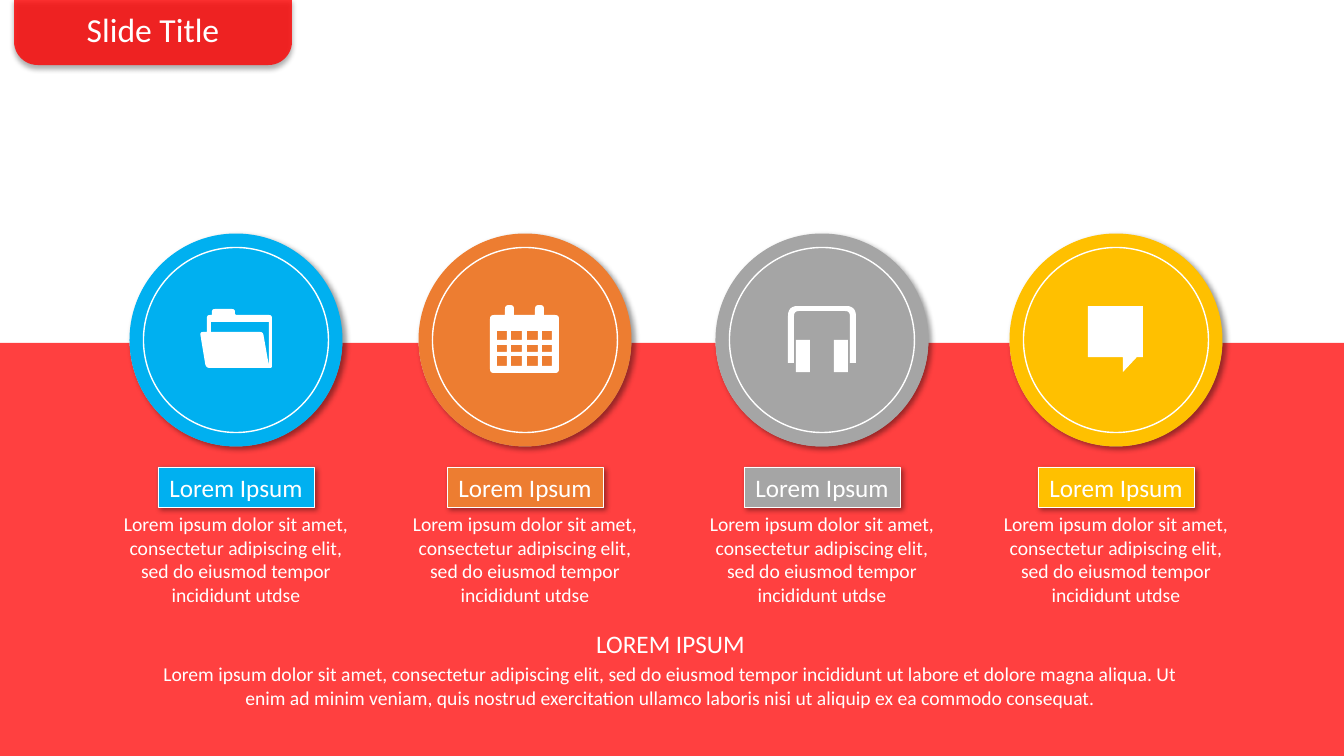
import math

import lxml.etree
import pptx
import pptx.dml.color
import pptx.enum.shapes
import pptx.enum.text
import pptx.oxml.ns
import pptx.util

SCALE = 914400 / 100.8  # EMU in one px
WIDTH, HEIGHT = 1344, 756
COLORS = {
    "red": "FF0000",
    "white": "FFFFFF",
    "black": "000000",
    "blue": "00B0F0",
    "orange": "ED7D31",
    "gray": "A5A5A5",
    "yellow": "FFC000",
}
SHAPES = pptx.enum.shapes.MSO_SHAPE
qn = pptx.oxml.ns.qn

# Circle row and red band
MIDDLE, RADIUS, RING_RADIUS, BAND_TOP = 340, 106.5, 92.5, 343

LABEL = "Lorem Ipsum"
DETAIL = ("Lorem ipsum dolor sit amet, consectetur adipiscing elit, "
          "sed do eiusmod tempor incididunt utdse")
SUMMARY = ("Lorem ipsum dolor sit amet, consectetur adipiscing elit, sed do eiusmod "
           "tempor incididunt ut labore et dolore magna aliqua. Ut enim ad minim "
           "veniam, quis nostrud exercitation ullamco laboris nisi ut aliquip ex ea "
           "commodo consequat.")


def block(left, top, width, height):
    right, bottom = left + width, top + height
    return [(left, top), (right, top), (right, bottom), (left, bottom)]


# Icon contours around the circle centre: x, y and optional corner radius
FOLDER = [
    [(-29, -8), (-29, -25, 3), (-24, -25), (-24, -31, 3), (-1, -31, 3),
     (-1, -25, 2), (36, -25, 3), (36, 28, 2), (-30, 28, 4), (-36, -8, 3)],
    [(33, -18), (33, 26), (27, -8, 3), (-25, -8), (-25, -18)],
]
CALENDAR = [
    [(-35, -25, 4), (-20, -25), (-20, -35, 4), (-11, -35, 4), (-11, -25),
     (10, -25), (10, -35, 4), (19, -35, 4), (19, -25), (34, -25, 4),
     (34, 33, 4), (-35, 33, 4)],
] + [
    block(left, top, width, height)
    for left, width in ((-28, 10), (-14, 11), (2, 11), (17, 10))
    for top, height in ((-9, 9), (5, 7), (16, 10))
]
HEADPHONES = [
    [(-34, 23), (-34, -34, 10), (34, -34, 10), (34, 23),
     (28, 23), (28, -29, 5), (-28, -29, 5), (-28, 23)],
    block(-26, 0, 14, 32),
    block(12, 0, 14, 32),
]
BUBBLE = [[(-28, -34), (27, -34), (27, 17), (21, 17), (7, 32), (7, 17), (-28, 17)]]

# Centre, colour and icon of each column
COLUMNS = [
    (236, "blue", FOLDER),
    (525, "orange", CALENDAR),
    (822, "gray", HEADPHONES),
    (1116, "yellow", BUBBLE),
]


def emu(px):
    return round(px * SCALE)


def rgb(name):
    return pptx.dml.color.RGBColor.from_string(COLORS[name])


def set_fill(shape, color, opacity=100):
    shape.fill.solid()
    shape.fill.fore_color.rgb = rgb(color)
    if opacity < 100:
        tint = shape.element.spPr.find(qn("a:solidFill")).find(qn("a:srgbClr"))
        lxml.etree.SubElement(tint, qn("a:alpha"), val=str(opacity * 1000))


def set_shadow(shape, angle):
    effects = shape.element.spPr.find(qn("a:effectLst"))
    shadow = lxml.etree.SubElement(
        effects, qn("a:outerShdw"), blurRad=str(pptx.util.Pt(4)),
        dist=str(pptx.util.Pt(3)), dir=str(angle * 60000), rotWithShape="0")
    tint = lxml.etree.SubElement(shadow, qn("a:srgbClr"), val=COLORS["black"])
    lxml.etree.SubElement(tint, qn("a:alpha"), val="40000")


def add_preset(page, kind, bounds, fill=None, line=0, shadow_angle=None, opacity=100):
    shape = page.shapes.add_shape(kind, *map(emu, bounds))
    shape.shadow.inherit = False
    if fill:
        set_fill(shape, fill, opacity)
    else:
        shape.fill.background()
    if line:
        shape.line.color.rgb = rgb("white")
        shape.line.width = pptx.util.Pt(line)
    else:
        shape.line.fill.background()
    if shadow_angle is not None:
        set_shadow(shape, shadow_angle)
    return shape


def add_outline(page, contours, color, opacity=100):
    contours = [[(emu(x), emu(y)) for x, y in contour] for contour in contours]
    builder = page.shapes.build_freeform(*contours[0][0], scale=1.0)
    for number, contour in enumerate(contours):
        if number:
            builder.move_to(*contour[0])
        builder.add_line_segments(contour[1:], close=True)
    shape = builder.convert_to_shape()
    shape.shadow.inherit = False
    set_fill(shape, color, opacity)
    shape.line.fill.background()


def round_corners(contour):
    """Replace each corner that has a radius by points on a curve."""
    points = []
    for index, (x, y, *radius) in enumerate(contour):
        if not radius:
            points.append((x, y))
            continue
        ends = []
        for near in (contour[index - 1], contour[(index + 1) % len(contour)]):
            share = radius[0] / math.dist((x, y), near[:2])
            ends.append((x + (near[0] - x) * share, y + (near[1] - y) * share))
        for step in range(7):
            t = step / 6
            points.append(tuple(
                (1 - t) ** 2 * start + 2 * t * (1 - t) * corner + t * t * end
                for start, corner, end in zip(ends[0], (x, y), ends[1])))
    return points


def write(box, lines, wrap=True):
    frame = box.text_frame
    frame.word_wrap = wrap
    frame.auto_size = pptx.enum.text.MSO_AUTO_SIZE.NONE
    for number, (text, size) in enumerate(lines):
        para = frame.add_paragraph() if number else frame.paragraphs[0]
        para.alignment = pptx.enum.text.PP_ALIGN.CENTER
        para.space_before = pptx.util.Pt(0.2 * size if number else 0)
        span = para.add_run()
        span.text = text
        span.font.name = "Calibri"
        span.font.size = pptx.util.Pt(size)
        span.font.color.rgb = rgb("white")


def add_text(page, bounds, lines):
    box = page.shapes.add_textbox(*map(emu, bounds))
    write(box, lines)
    return box.text_frame


def add_band(page):
    edge = [(0, BAND_TOP)]
    start = math.asin((BAND_TOP - MIDDLE) / RADIUS)
    for center, _, _ in COLUMNS:
        for step in range(41):
            angle = math.pi - start - step / 40 * (math.pi - 2 * start)
            edge.append((center + RADIUS * math.cos(angle),
                         MIDDLE + RADIUS * math.sin(angle)))
    edge += [(WIDTH, BAND_TOP), (WIDTH, HEIGHT), (0, HEIGHT)]
    add_outline(page, [edge], "red", 75)


def add_column(page, center, color, icon):
    for radius, style in ((RADIUS, {"fill": color, "shadow_angle": 45}),
                          (RING_RADIUS, {"line": 1})):
        bounds = (center - radius, MIDDLE - radius, 2 * radius, 2 * radius)
        add_preset(page, SHAPES.OVAL, bounds, **style)
    label = add_preset(page, SHAPES.RECTANGLE, (center - 78, 467, 156, 40), color, 0.5, 45)
    write(label, [(LABEL, 18)], wrap=False)
    detail = add_text(page, (center - 123, 509, 246, 102), [(DETAIL, 14)])
    detail.margin_left = detail.margin_right = emu(7)
    detail.margin_top = detail.margin_bottom = emu(3)
    contours = [[(center + x, MIDDLE + y) for x, y in round_corners(contour)]
                for contour in icon]
    add_outline(page, contours, "white")


def add_title(page):
    tab = add_preset(page, SHAPES.ROUND_2_SAME_RECTANGLE, (14, -2, 278, 67),
                     "red", shadow_angle=90, opacity=80)
    tab.rotation = 180
    tab.adjustments[0] = 0.352
    title = page.shapes.title
    title.left, title.top, title.width, title.height = map(emu, (14, 4, 278, 50))
    write(title, [("Slide Title", 24)])
    title.text_frame.vertical_anchor = pptx.enum.text.MSO_ANCHOR.TOP
    page.shapes.element.append(title.element)  # bring in front of the tab


def main():
    deck = pptx.Presentation()
    deck.slide_width, deck.slide_height = emu(WIDTH), emu(HEIGHT)
    page = deck.slides.add_slide(deck.slide_layouts[5])
    add_band(page)
    for column in COLUMNS:
        add_column(page, *column)
    add_title(page)
    add_text(page, (153, 623, 1035, 97), [("LOREM IPSUM", 18), (SUMMARY, 14)])
    deck.save("out.pptx")


if __name__ == "__main__":
    main()
